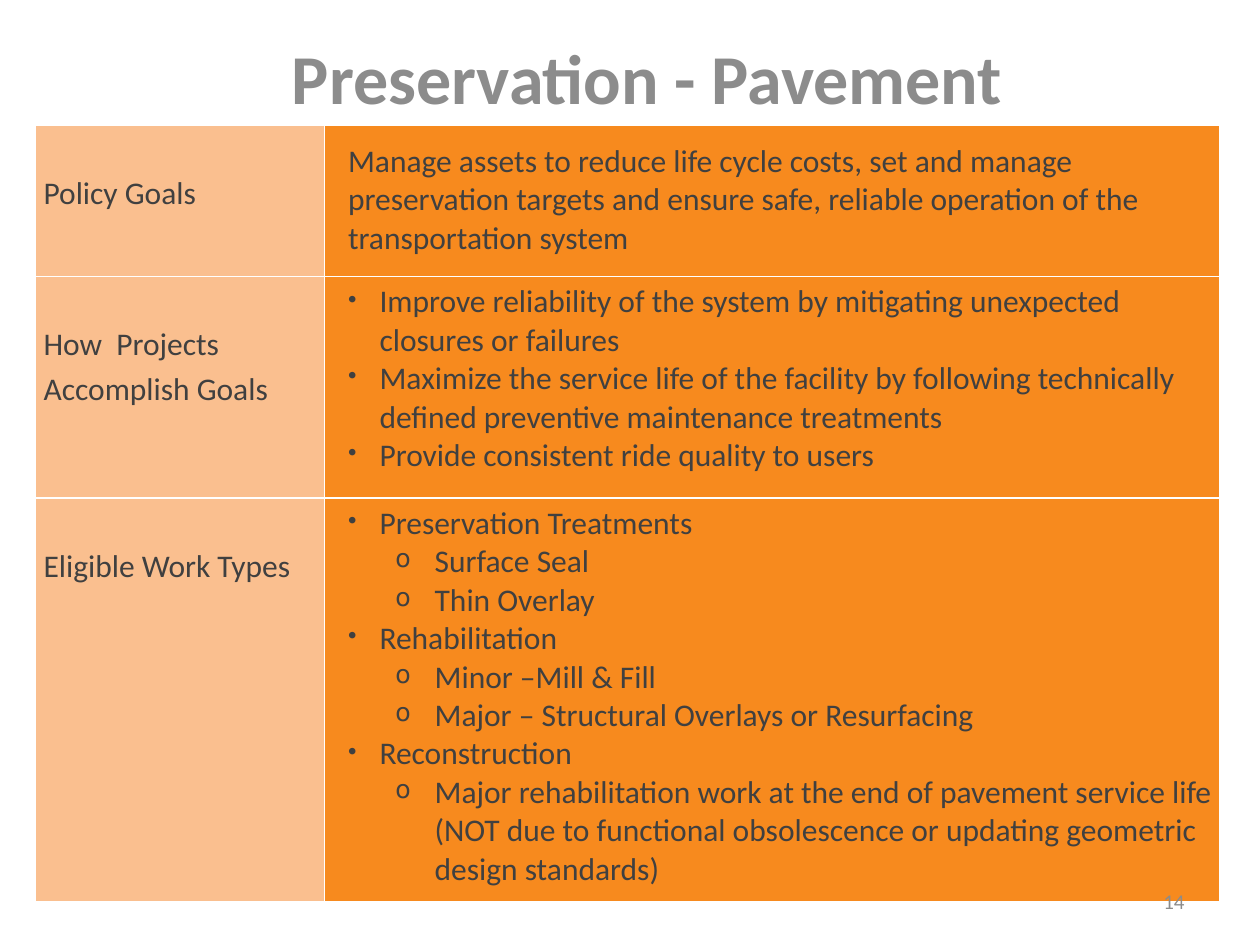
from lxml.etree import SubElement
from pptx import Presentation
from pptx.dml.color import RGBColor
from pptx.enum.text import MSO_ANCHOR as Anchor, PP_ALIGN as Align
from pptx.oxml import parse_xml
from pptx.oxml.ns import nsdecls, qn
from pptx.util import Pt

GREY = RGBColor(0x8C, 0x8C, 0x8C)
DARK = RGBColor(0x40, 0x40, 0x40)
PEACH = RGBColor(0xFA, 0xBF, 0x8F)
ORANGE = RGBColor(0xF7, 0x8A, 0x1E)
WHITE = RGBColor(0xFF, 0xFF, 0xFF)

# Style: (left margin, first-line indent, bullet, outline level)
PLAIN = (0, 0, None, 0)
GOAL = (9, 0, None, 0)
POINT = (27, -18, "•", 0)
SUBPOINT = (58.5, -22.5, "o", 1)

# Row: height, label, top margin of the details, details
ROWS = [
    (86.4, "Policy Goals", 9.7, [
        (GOAL, "Manage assets to reduce life cycle costs, set and manage preservation "
               "targets and ensure safe, reliable operation of the transportation system"),
    ]),
    (126.5, "How  Projects Accomplish Goals", 3.7, [
        (POINT, "Improve reliability of the system by mitigating unexpected closures or failures"),
        (POINT, "Maximize the service life of the facility by following technically "
                "defined preventive maintenance treatments"),
        (POINT, "Provide consistent ride quality to users"),
    ]),
    (230.8, "Eligible Work Types", 3.7, [
        (POINT, "Preservation Treatments"),
        (SUBPOINT, "Surface Seal"),
        (SUBPOINT, "Thin Overlay"),
        (POINT, "Rehabilitation"),
        (SUBPOINT, "Minor –Mill & Fill"),
        (SUBPOINT, "Major – Structural Overlays or Resurfacing"),
        (POINT, "Reconstruction"),
        (SUBPOINT, "Major rehabilitation work at the end of pavement service life (NOT due to "
                   "functional obsolescence or updating geometric design standards)"),
    ]),
]


def write(paragraph, text, size, color, bold=False):
    run = paragraph.add_run()
    run.text = text
    for key, value in {"name": "Calibri", "size": Pt(size), "bold": bold}.items():
        setattr(run.font, key, value)
    run.font.color.rgb = color


def fill_cell(cell, color, top, line_spacing, items):
    """Fill a cell with a colour, white borders and styled paragraphs."""
    cell.fill.solid()
    cell.fill.fore_color.rgb = color
    margins = {"margin_left": 4.5, "margin_right": 4.5, "margin_top": top, "margin_bottom": 0}
    for key, value in margins.items():
        setattr(cell, key, Pt(value))
    cell.vertical_anchor = Anchor.TOP
    properties = cell._tc.get_or_add_tcPr()
    for place, side in enumerate("LRTB"):
        properties.insert(place, parse_xml(
            f'<a:ln{side} {nsdecls("a")} w="12700"><a:solidFill>'
            f'<a:srgbClr val="{WHITE}"/></a:solidFill></a:ln{side}>'))

    frame = cell.text_frame
    for number, ((left, indent, bullet, level), text) in enumerate(items):
        paragraph = frame.add_paragraph() if number else frame.paragraphs[0]
        paragraph.level = level
        paragraph.line_spacing = line_spacing
        layout = paragraph._p.get_or_add_pPr()
        layout.set("marL", str(Pt(left)))
        layout.set("indent", str(Pt(indent)))
        if bullet:
            SubElement(layout, qn("a:buSzPct")).set("val", "80000")
            SubElement(layout, qn("a:buChar")).set("char", bullet)
        write(paragraph, text, 18, DARK)


deck = Presentation()
deck.slide_width, deck.slide_height = Pt(720), Pt(540)
slide = deck.slides.add_slide(deck.slide_layouts[5])

title = slide.shapes.title
for key, value in {"left": 143.3, "top": 16, "width": 453, "height": 124}.items():
    setattr(title, key, Pt(value))
title.text_frame.vertical_anchor = Anchor.TOP
heading = title.text_frame.paragraphs[0]
heading.alignment = Align.CENTER
write(heading, "Preservation - Pavement", 40, GREY, bold=True)

table = slide.shapes.add_table(
    len(ROWS), 2, Pt(20.4), Pt(71.6), Pt(676.8), Pt(443.7)).table
table.first_row = table.horz_banding = False
for column, width in zip(table.columns, (165, 511.8)):
    column.width = Pt(width)
for row, (height, label, top, details) in zip(table.rows, ROWS):
    row.height = Pt(height)
    label_cell, detail_cell = row.cells
    fill_cell(label_cell, PEACH, 25, 1.15, [(PLAIN, label)])
    fill_cell(detail_cell, ORANGE, top, 1.0, details)

page_number = slide.shapes.add_textbox(Pt(516), Pt(500.5), Pt(168), Pt(28.8)).text_frame
page_number.word_wrap = True
page_number.vertical_anchor = Anchor.MIDDLE
page_number.paragraphs[0].alignment = Align.RIGHT
write(page_number.paragraphs[0], "14", 12, GREY)

deck.save("out.pptx")
